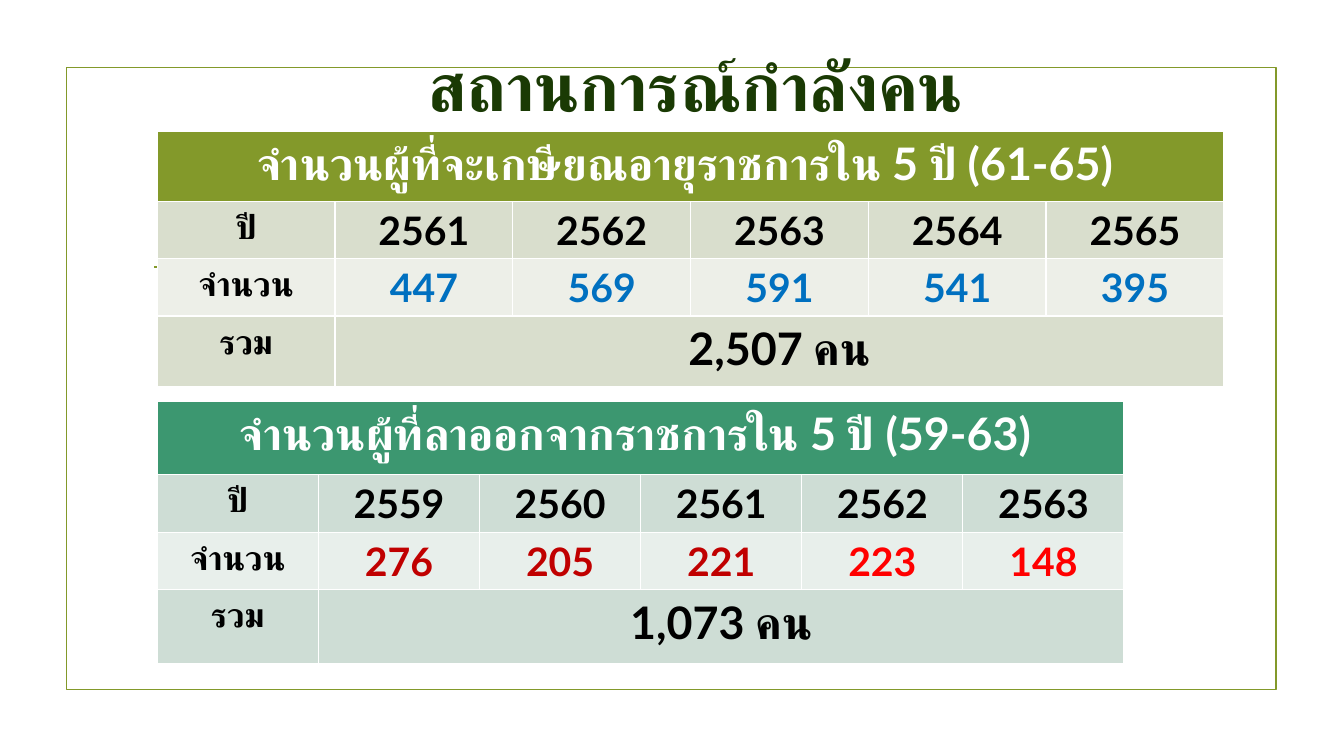
"""Build the slide on retirements and resignations in the workforce."""
from lxml import etree
from pptx import Presentation
from pptx.dml.color import RGBColor
from pptx.enum.shapes import MSO_CONNECTOR as LINK, MSO_SHAPE as SHAPE
from pptx.enum.text import MSO_ANCHOR as ANCHOR, PP_ALIGN as ALIGN
from pptx.oxml.ns import qn
from pptx.util import Inches, Pt


def paint(part, color):
    if hasattr(part, "solid"):
        part.solid()
        part = part.fore_color
    part.rgb = RGBColor.from_string(color)


def write(frame, text, size, color):
    frame.text = text
    para = frame.paragraphs[0]
    para.alignment = ALIGN.CENTER
    font = para.runs[0].font
    font.name, font.size, font.bold = "Lato", Pt(size), True
    paint(font.color, color)
    etree.SubElement(font._element, qn("a:cs"), typeface="Lato")


deck = Presentation()
deck.slide_width, deck.slide_height = Inches(13.33), Inches(7.5)
slide = deck.slides.add_slide(deck.slide_layouts[6])
shapes = slide.shapes

frame = shapes.add_shape(SHAPE.RECTANGLE, Inches(0.66), Inches(0.67), Inches(12), Inches(6.17))
frame.shadow.inherit = False
frame.fill.background()
rule = shapes.add_connector(LINK.STRAIGHT, Inches(1.53), Inches(2.65), Inches(11.81), Inches(2.65))
etree.SubElement(rule._element.spPr, qn("a:effectLst"))
for item in (frame, rule):
    paint(item.line.fill, "83992A")
    item.line.width = Pt(1.25)

BLACK, BLUE, DARK, RED = "000000", "0070C0", "C00000", "FF0000"
tables = [
    dict(top=1.3, width=10.58, highs=(0.7, 0.55, 0.55, 0.7),
         fills=("83992A", "D9DECD", "EDEFE8", "D9DECD"),
         head="จำนวนผู้ที่จะเกษียณอายุราชการใน 5 ปี (61-65) ",
         years=range(2561, 2566), counts=(447, 569, 591, 541, 395),
         inks=[BLUE] * 5, total="2,507 คน", tight=False),
    dict(top=3.98, width=9.59, highs=(0.73, 0.57, 0.57, 0.73),
         fills=("3C9770", "CEDDD5", "E8EFEB", "CEDDD5"),
         head="จำนวนผู้ที่ลาออกจากราชการใน 5 ปี (59-63) ",
         years=range(2559, 2564), counts=(276, 205, 221, 223, 148),
         inks=[DARK] * 3 + [RED] * 2, total="1,073 คน", tight=True),
]

for data in tables:
    grid = shapes.add_table(4, 6, Inches(1.56), Inches(data["top"]),
                            Inches(data["width"]), Inches(sum(data["highs"]))).table
    for col in grid.columns:
        col.width = Inches(data["width"] / 6)
    for row, high, fill in zip(grid.rows, data["highs"], data["fills"]):
        row.height = Inches(high)
        for cell in row.cells:
            for side in ("lnL", "lnR", "lnT", "lnB"):
                wide = 3 if side == "lnB" and row is grid.rows[0] else 1
                edge = etree.SubElement(cell._tc.get_or_add_tcPr(), qn("a:" + side), w=str(Pt(wide)))
                ink = etree.SubElement(edge, qn("a:solidFill"))
                etree.SubElement(ink, qn("a:srgbClr"), val="FFFFFF")
            paint(cell.fill, fill)
    grid.cell(0, 0).merge(grid.cell(0, 5))
    grid.cell(3, 1).merge(grid.cell(3, 5))
    write(grid.cell(0, 0).text_frame, data["head"], 32, "FFFFFF")
    write(grid.cell(3, 1).text_frame, data["total"], 32, BLACK)
    for row, label in enumerate(("ปี", "จำนวน", "รวม"), 1):
        write(grid.cell(row, 0).text_frame, label, 24, BLACK)
    for col, (year, count, ink) in enumerate(zip(data["years"], data["counts"], data["inks"]), 1):
        write(grid.cell(1, col).text_frame, str(year), 28, BLACK)
        cell = grid.cell(2, col)
        write(cell.text_frame, str(count), 28, ink)
        if data["tight"]:
            cell.vertical_anchor = ANCHOR.MIDDLE
            cell.margin_left = cell.margin_right = Inches(0.07)
            cell.margin_top = cell.margin_bottom = 0

title = shapes.add_textbox(Inches(2.4), Inches(0.44), Inches(9), Inches(0.79)).text_frame
title.word_wrap = True
title.vertical_anchor = ANCHOR.MIDDLE
write(title, "สถานการณ์กำลังคน", 48, "1A3A04")

deck.save("out.pptx")
